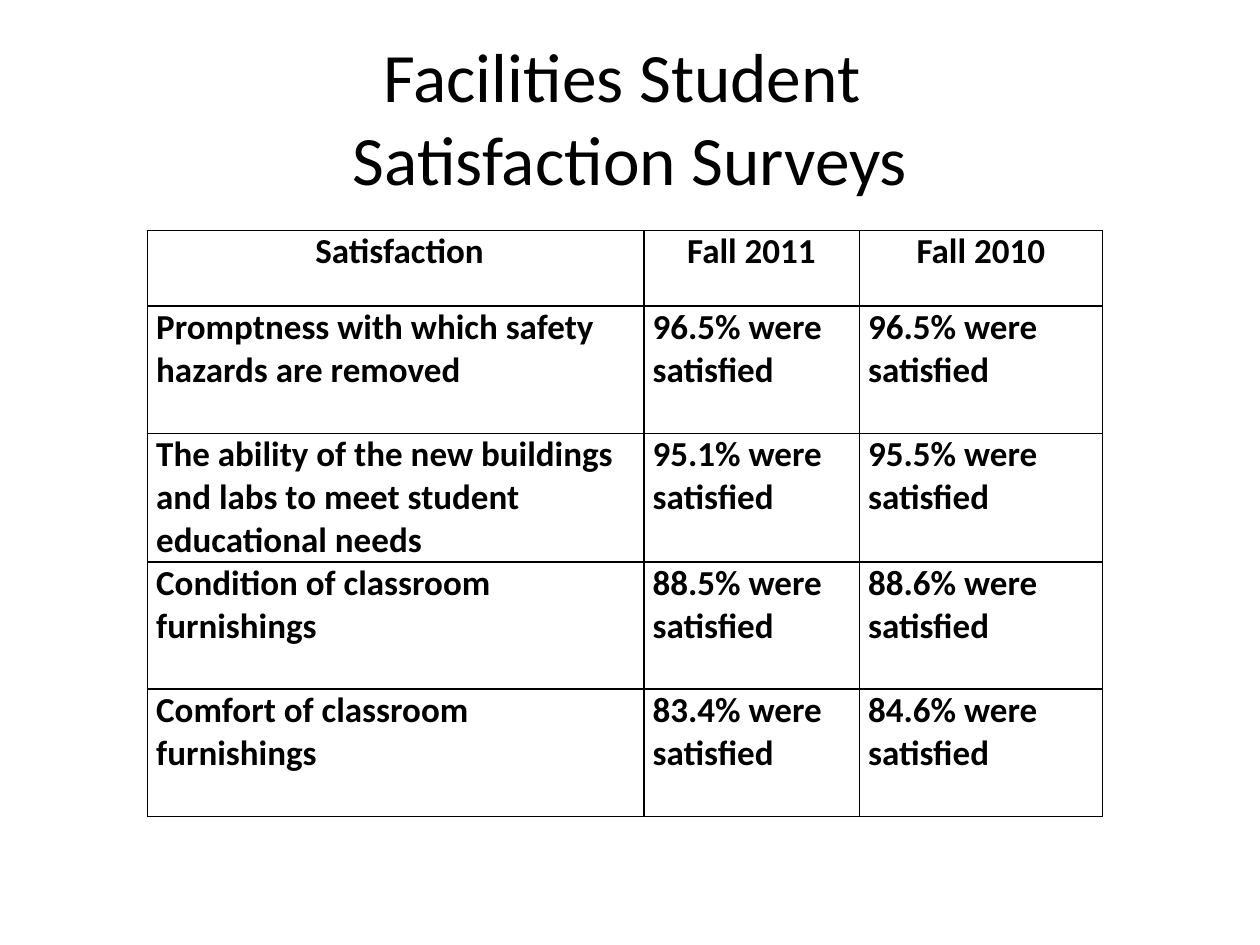
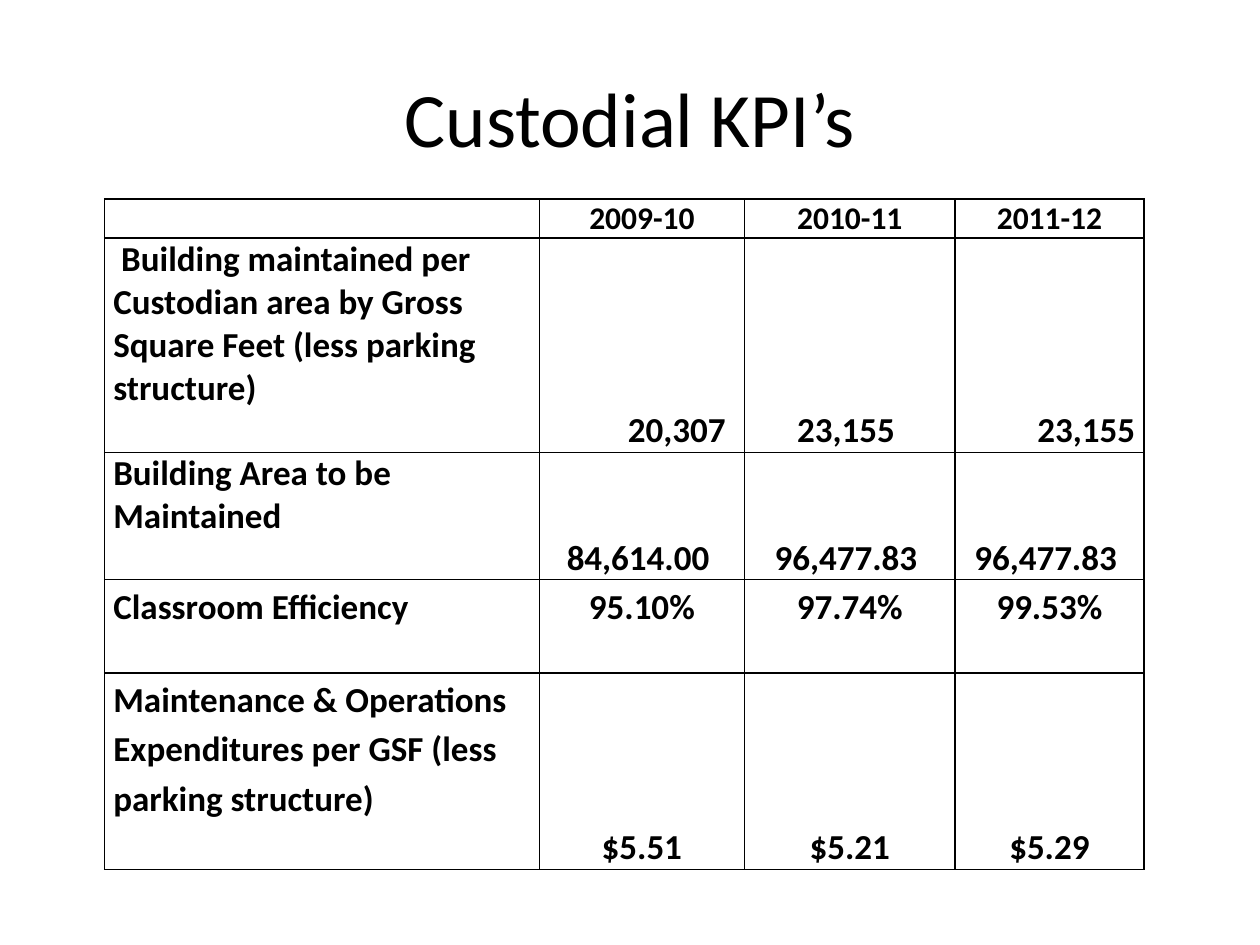
from collections import namedtuple

from lxml import etree
from pptx import Presentation
from pptx.dml.color import RGBColor as RGB
from pptx.enum.text import MSO_ANCHOR as Anchor, PP_ALIGN as Align
from pptx.oxml.ns import qn
from pptx.util import Inches, Pt

# Shared look
Theme = namedtuple("Theme", "font ink line head body pad")
theme = Theme("Calibri", "000000", Pt(1), 18, 20, 0.07)
LEFT, MID, RIGHT = Align.LEFT, Align.CENTER, Align.RIGHT
TOP, LOW = Anchor.TOP, Anchor.BOTTOM


def style(para, size, align, bold=False):
    para.alignment = align
    font = para.font
    font.name, font.size, font.bold = theme.font, Pt(size), bold
    font.color.rgb = RGB.from_string(theme.ink)


def border(cell):
    props = cell._tc.get_or_add_tcPr()
    for spot, side in enumerate(("lnL", "lnR", "lnT", "lnB")):
        line = etree.Element(qn(f"a:{side}"), w=str(theme.line))
        fill = etree.SubElement(line, qn("a:solidFill"))
        etree.SubElement(fill, qn("a:srgbClr"), val=theme.ink)
        props.insert(spot, line)


# Cell: text, align, anchor, size, line spacing, right margin
Cell = namedtuple("Cell", "text align anchor size gap right",
                  defaults=(LEFT, TOP, theme.body, 1.0, theme.pad))

# Survey rows
survey = [[Cell(text, MID) for text in (" Satisfaction", "Fall 2011", "Fall 2010")]]
for topic, new, old in (
    ("Promptness with which safety hazards are removed", 96.5, 96.5),
    ("The ability of the new buildings and labs to meet student educational needs", 95.1, 95.5),
    ("Condition of classroom furnishings", 88.5, 88.6),
    ("Comfort of classroom furnishings", 83.4, 84.6),
):
    survey.append([Cell(topic)] + [Cell(f"{rate}% were satisfied") for rate in (new, old)])

# Custodial rows
years = ("", "2009-10", "2010-11", "2011-12")
areas = ("84,614.00", "96,477.83", "96,477.83")
rates = ("95.10%", "97.74%", "99.53%")
costs = ("$5.51", "$5.21", "$5.29")
wide = 1.15
kpis = [
    [Cell(year, MID, size=theme.head) for year in years],
    [Cell(" Building maintained per Custodian area by Gross Square Feet (less parking structure)"),
     Cell("20,307", RIGHT, LOW, gap=wide, right=0.15),
     Cell("23,155", MID, LOW, gap=wide, right=0.13),
     Cell("23,155", RIGHT, LOW, gap=wide)],
    [Cell("Building Area to be Maintained")]
    + [Cell(area, MID, LOW, gap=wide, right=0.13) for area in areas],
    [Cell("Classroom Efficiency", gap=wide)]
    + [Cell(rate, MID, gap=wide) for rate in rates],
    [Cell("Maintenance & Operations Expenditures per GSF (less parking structure)", gap=wide)]
    + [Cell(cost, MID, LOW, gap=wide) for cost in costs],
]

# Slides: title, title size, table corner, column widths, row heights, cells
pages = (
    ("Facilities Student \vSatisfaction Surveys", 39.6, (1.17, 1.83),
     (3.94, 1.71, 1.93), (0.6, 1.01, 1.02, 1.01, 1.01), survey),
    ("Custodial KPI’s", 44, (0.83, 1.58),
     (3.45, 1.63, 1.67, 1.5), (0.31, 1.7, 1.01, 0.74, 1.56), kpis),
)

deck = Presentation()
deck.slide_width, deck.slide_height = Inches(10), Inches(7.5)

for title, size, (left, top), widths, heights, cells in pages:
    slide = deck.slides.add_slide(deck.slide_layouts[6])

    # Title
    box = slide.shapes.add_textbox(Inches(0.5), Inches(0.3), Inches(9), Inches(1.25))
    frame = box.text_frame
    frame.word_wrap = True
    frame.vertical_anchor = Anchor.MIDDLE
    frame.text = title
    style(frame.paragraphs[0], size, MID)

    # Table
    table = slide.shapes.add_table(
        len(heights), len(widths), Inches(left), Inches(top),
        Inches(sum(widths)), Inches(sum(heights))).table
    table.first_row = table.horz_banding = False
    for col, width in zip(table.columns, widths):
        col.width = Inches(width)
    for row, height, items in zip(table.rows, heights, cells):
        row.height = Inches(height)
        for cell, item in zip(row.cells, items):
            cell.text = item.text
            cell.fill.background()
            cell.vertical_anchor = item.anchor
            cell.margin_left, cell.margin_right = Inches(theme.pad), Inches(item.right)
            cell.margin_top = cell.margin_bottom = 0
            para = cell.text_frame.paragraphs[0]
            style(para, item.size, item.align, True)
            para.line_spacing = item.gap
            border(cell)

deck.save("out.pptx")
